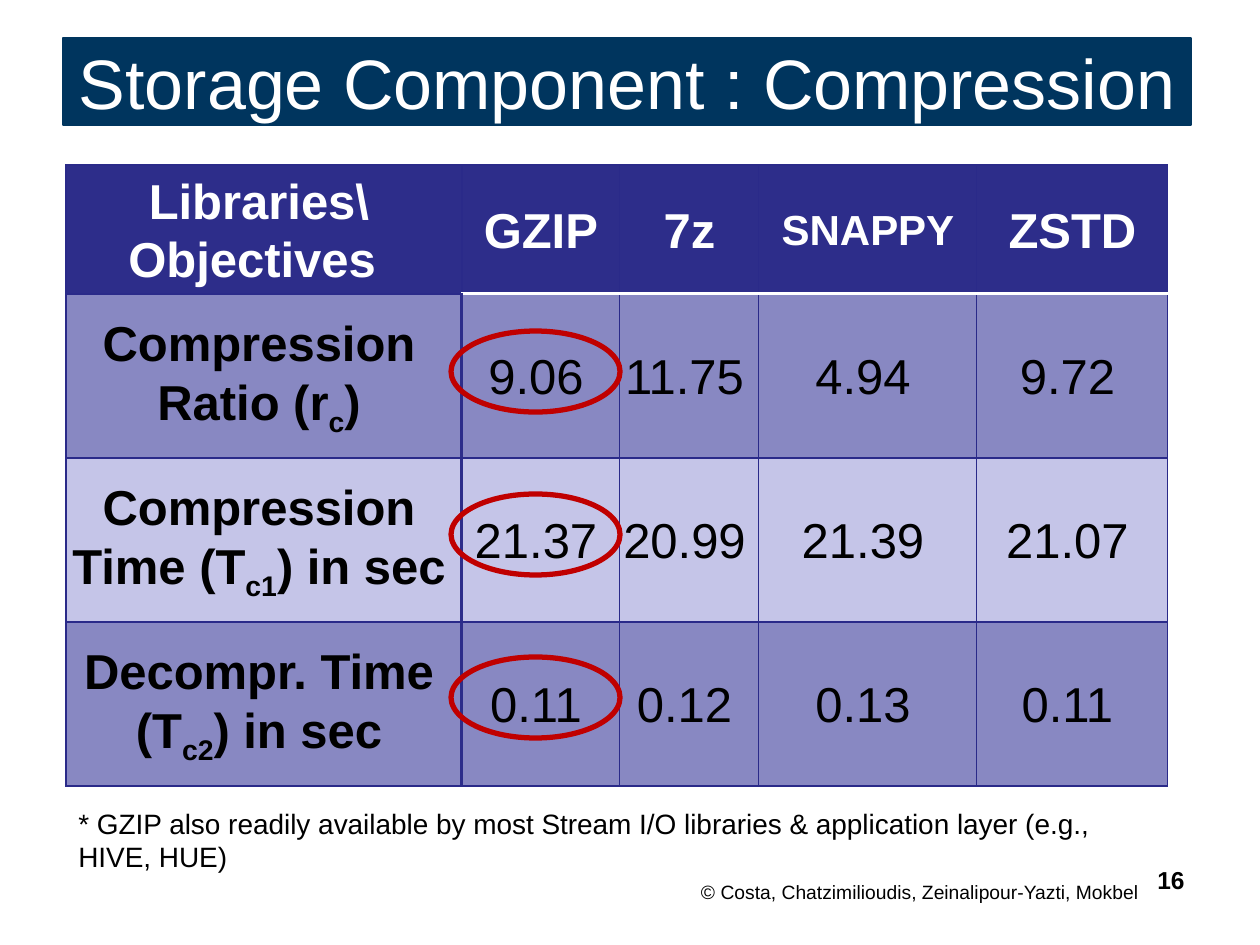
from lxml import etree
from pptx import Presentation
from pptx.dml.color import RGBColor
from pptx.enum.shapes import MSO_SHAPE
from pptx.enum.text import MSO_ANCHOR, MSO_AUTO_SIZE, PP_ALIGN
from pptx.oxml.ns import qn
from pptx.util import Pt

PX = 914400 / 126
OVAL = MSO_SHAPE.OVAL
MIDDLE = MSO_ANCHOR.MIDDLE
LEFT, CENTER, RIGHT = PP_ALIGN.LEFT, PP_ALIGN.CENTER, PP_ALIGN.RIGHT
FONT = "Arial"
NAVY, INDIGO, GRID = "00355E", "2D2D8A", "2A2A89"
DARK_BAND, LIGHT_BAND = "8888C2", "C5C5E8"
WHITE, BLACK, RED = "FFFFFF", "000000", "C00000"

COLUMN_WIDTHS = [396, 158, 139, 218, 191]
ROW_HEIGHTS = [129, 164, 164, 164]
LIBRARIES = ["GZIP", "7z", "SNAPPY", "ZSTD"]
# Each objective: name, subscript, rest of the label, one value per library
OBJECTIVES = [
    ("Compression Ratio (r", "c", ")", ["9.06", "11.75", "4.94", "9.72"]),
    ("Compression Time (T", "c1", ") in sec", ["21.37", "20.99", "21.39", "21.07"]),
    ("Decompr. Time (T", "c2", ") in sec", ["0.11", "0.12", "0.13", "0.11"]),
]


def px(length):
    return round(length * PX)


def rgb(value):
    return RGBColor.from_string(value)


def style(paragraph, size, color, bold=False, align=CENTER):
    paragraph.alignment = align
    font = paragraph.font
    font.name, font.size, font.bold = FONT, Pt(size), bold
    font.color.rgb = rgb(color)


def add_title(slide, left, top, width, height):
    title = slide.shapes.title
    title.left, title.top, title.width, title.height = map(px, (left, top, width, height))
    title.fill.solid()
    title.fill.fore_color.rgb = rgb(NAVY)
    title.line.color.rgb = rgb(NAVY)
    title.line.width = Pt(0.75)
    frame = title.text_frame
    frame.text = "Storage Component : Compression"
    frame.auto_size = MSO_AUTO_SIZE.NONE
    frame.vertical_anchor = MIDDLE
    style(frame.paragraphs[0], 40, WHITE)


def add_text(slide, left, top, width, height, text, size, bold=False, align=LEFT):
    box = slide.shapes.add_textbox(*map(px, (left, top, width, height)))
    frame = box.text_frame
    frame.word_wrap = True
    frame.text = text
    style(frame.paragraphs[0], size, BLACK, bold, align)


def set_border(cell, side, color, points):
    line = etree.SubElement(cell._tc.get_or_add_tcPr(), qn(f"a:ln{side}"), w=str(Pt(points)))
    fill = etree.SubElement(line, qn("a:solidFill"))
    etree.SubElement(fill, qn("a:srgbClr"), val=color)


def format_cell(cell, row, column):
    """Set margins, borders and fill by the cell's place in the grid."""
    cell.margin_left = cell.margin_top = cell.margin_bottom = 0
    cell.margin_right = px(10)
    cell.vertical_anchor = MIDDLE
    borders = {side: (GRID, 0.75) for side in "LRTB"}
    if row == 0 and column > 0:
        borders["B"] = (WHITE, 2)
    if row == 1 and column > 0:
        borders["T"] = (WHITE, 2)
    if row > 0 and column == 0:
        borders["R"] = (INDIGO, 2)
    if row > 0 and column == 1:
        borders["L"] = (INDIGO, 2)
    for side, (color, points) in borders.items():
        set_border(cell, side, color, points)
    cell.fill.solid()
    band = DARK_BAND if row % 2 else LIGHT_BAND
    cell.fill.fore_color.rgb = rgb(band if row else INDIGO)


def style_cell(cell, color, bold, size=28, indent=0):
    for paragraph in cell.text_frame.paragraphs:
        paragraph.line_spacing = 1.07
        if indent:
            paragraph._p.get_or_add_pPr().set("marL", str(px(indent)))
        style(paragraph, size, color, bold)


def fill_objective_label(cell, name, subscript, rest):
    paragraph = cell.text_frame.paragraphs[0]
    for text in (name, subscript, rest):
        run = paragraph.add_run()
        run.text = text
        if text == subscript:
            run.font._element.set("baseline", "-25000")
    style_cell(cell, BLACK, True)


def add_comparison(slide, left, top):
    """Place the table of objectives by library."""
    size = sum(COLUMN_WIDTHS), sum(ROW_HEIGHTS)
    table = slide.shapes.add_table(
        len(ROW_HEIGHTS), len(COLUMN_WIDTHS), *map(px, (left, top, *size))).table
    table.horz_banding = False
    for column, width in zip(table.columns, COLUMN_WIDTHS):
        column.width = px(width)
    for r, height in enumerate(ROW_HEIGHTS):
        table.rows[r].height = px(height)
        for c in range(len(COLUMN_WIDTHS)):
            format_cell(table.cell(r, c), r, c)

    corner = table.cell(0, 0)
    corner.text = "Libraries\\\nObjectives "
    style_cell(corner, WHITE, True)
    for c, library in enumerate(LIBRARIES, 1):
        cell = table.cell(0, c)
        cell.text = library
        style_cell(cell, WHITE, True, 24 if library == "SNAPPY" else 28, indent=10)
    for r, (name, subscript, rest, values) in enumerate(OBJECTIVES, 1):
        fill_objective_label(table.cell(r, 0), name, subscript, rest)
        for c, value in enumerate(values, 1):
            cell = table.cell(r, c)
            cell.text = value
            style_cell(cell, BLACK, False)


def add_highlights(slide, left, top, width, height, pitch):
    """Ring the GZIP value of each objective."""
    for i in range(len(OBJECTIVES)):
        ring = slide.shapes.add_shape(OVAL, *map(px, (left, top + i * pitch, width, height)))
        ring.shadow.inherit = False
        ring.fill.background()
        ring.line.color.rgb = rgb(RED)
        ring.line.width = Pt(3)


def main():
    deck = Presentation()
    deck.slide_width, deck.slide_height = px(1260), px(945)
    slide = deck.slides.add_slide(deck.slide_layouts[5])
    add_title(slide, 63, 38, 1128, 87)
    add_comparison(slide, 66, 165)
    add_highlights(slide, 451, 331, 169, 81, 163)
    add_text(slide, 66, 800, 1101, 81,
             "* GZIP also readily available by most Stream I/O libraries"
             " & application layer (e.g., HIVE, HUE)", 16)
    add_text(slide, 683, 874, 474, 37,
             "© Costa, Chatzimilioudis, Zeinalipour-Yazti, Mokbel", 11, align=CENTER)
    add_text(slide, 1126, 859, 71, 66, "16", 14, bold=True, align=RIGHT)
    deck.save("out.pptx")


if __name__ == "__main__":
    main()
